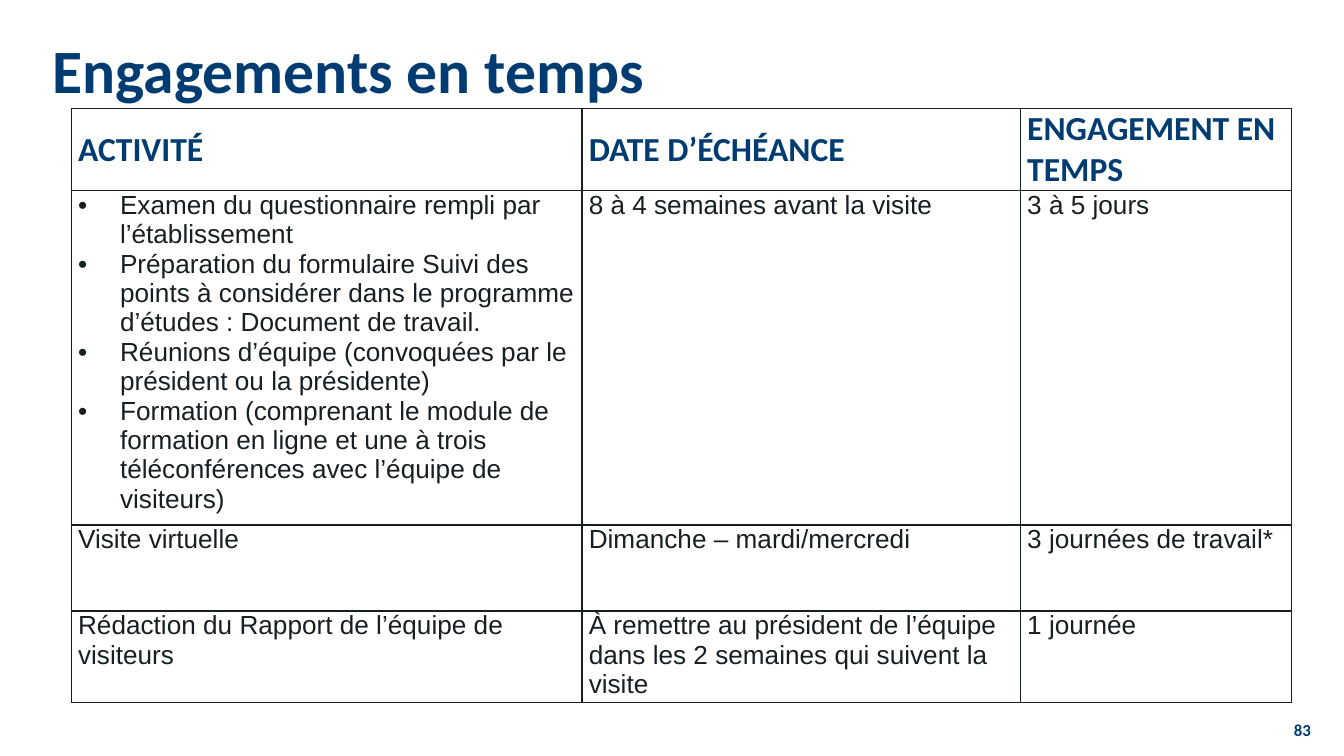
from dataclasses import dataclass

from lxml import etree
from pptx import Presentation
from pptx.dml.color import RGBColor
from pptx.enum import text
from pptx.oxml import ns
from pptx.util import Pt


@dataclass(frozen=True)
class Theme:
    navy: str = "003C71"
    ink: str = "171F23"
    heading_font: str = "Calibri"
    body_font: str = "Arial"
    title_size: int = 33
    header_size: int = 18
    body_size: int = 14
    number_size: int = 9


THEME = Theme()
BULLET_INDENT = Pt(22.5)
COLUMN_WIDTHS = (273.6, 234.9, 145.3)
ROW_HEIGHTS = (41.8, 179.2, 46.1, 49)

HEADERS = ("ACTIVITÉ", "DATE D’ÉCHÉANCE", "ENGAGEMENT EN TEMPS")
PREPARATION = (
    "Examen du questionnaire rempli par l’établissement",
    "Préparation du formulaire Suivi des points à considérer dans le programme "
    "d’études : Document de travail.",
    "Réunions d’équipe (convoquées par le président ou la présidente)",
    "Formation (comprenant le module de formation en ligne et une à trois "
    "téléconférences avec l’équipe de visiteurs)",
)
ROWS = (
    (PREPARATION, "8 à 4 semaines avant la visite", "3 à 5 jours"),
    ("Visite virtuelle", "Dimanche – mardi/mercredi", "3 journées de travail*"),
    (
        "Rédaction du Rapport de l’équipe de visiteurs",
        "À remettre au président de l’équipe dans les 2 semaines qui suivent la visite",
        "1 journée",
    ),
)


def write(paragraph, content, *, size, font=THEME.heading_font, color=THEME.navy,
          bold=True, align=text.PP_ALIGN.LEFT, bullet=False, line_spacing=None):
    """Put formatted text into a paragraph."""
    paragraph.alignment = align
    paragraph.line_spacing = line_spacing
    if bullet:
        add_bullet(paragraph)
    run = paragraph.add_run()
    run.text = content
    run.font.size = Pt(size)
    run.font.name = font
    run.font.bold = bold
    run.font.color.rgb = RGBColor.from_string(color)


def add_bullet(paragraph):
    properties = paragraph._p.get_or_add_pPr()
    properties.set("marL", str(BULLET_INDENT))
    properties.set("indent", str(-BULLET_INDENT))
    etree.SubElement(properties, ns.qn("a:buFont"), typeface=THEME.body_font)
    etree.SubElement(properties, ns.qn("a:buChar"), char="•")


def add_borders(cell):
    properties = cell._tc.get_or_add_tcPr()
    for side in ("lnL", "lnR", "lnT", "lnB"):
        line = etree.SubElement(properties, ns.qn(f"a:{side}"), w=str(Pt(1)))
        fill = etree.SubElement(line, ns.qn("a:solidFill"))
        etree.SubElement(fill, ns.qn("a:srgbClr"), val=THEME.ink)


def fill_cell(cell, content, *, anchor, **text_format):
    """Write one paragraph, or a bulleted list when given a tuple."""
    cell.margin_left = cell.margin_right = Pt(3.6)
    cell.margin_top = cell.margin_bottom = 0
    cell.vertical_anchor = anchor
    add_borders(cell)
    cell.fill.background()

    bulleted = isinstance(content, tuple)
    frame = cell.text_frame
    for index, item in enumerate(content if bulleted else (content,)):
        paragraph = frame.add_paragraph() if index else frame.paragraphs[0]
        write(paragraph, item, bullet=bulleted, **text_format)


def add_title(slide, content):
    title = slide.shapes.title
    title.left, title.top, title.width, title.height = Pt(21), 0, Pt(620.6), Pt(78.5)
    frame = title.text_frame
    frame.auto_size = text.MSO_AUTO_SIZE.NONE
    frame.vertical_anchor = text.MSO_ANCHOR.MIDDLE
    write(frame.paragraphs[0], content, size=THEME.title_size, line_spacing=0.9)


def add_schedule(slide):
    table = slide.shapes.add_table(
        len(ROW_HEIGHTS), len(COLUMN_WIDTHS), Pt(38.2), Pt(58.2),
        Pt(sum(COLUMN_WIDTHS)), Pt(sum(ROW_HEIGHTS))).table
    table.first_row = table.horz_banding = False
    for column, width in zip(table.columns, COLUMN_WIDTHS):
        column.width = Pt(width)
    for row, height in zip(table.rows, ROW_HEIGHTS):
        row.height = Pt(height)

    # Header row
    for column, label in enumerate(HEADERS):
        fill_cell(table.cell(0, column), label, anchor=text.MSO_ANCHOR.MIDDLE,
                  size=THEME.header_size)

    # Activity rows
    for row, entries in enumerate(ROWS, start=1):
        for column, entry in enumerate(entries):
            fill_cell(table.cell(row, column), entry, anchor=text.MSO_ANCHOR.TOP,
                      size=THEME.body_size, font=THEME.body_font,
                      color=THEME.ink, bold=False)


def add_slide_number(slide, number):
    frame = slide.shapes.add_textbox(Pt(683.3), Pt(385.2), Pt(26), Pt(11.5)).text_frame
    frame.word_wrap = True
    frame.vertical_anchor = text.MSO_ANCHOR.MIDDLE
    write(frame.paragraphs[0], number, size=THEME.number_size,
          align=text.PP_ALIGN.RIGHT)


def main():
    presentation = Presentation()
    presentation.slide_width, presentation.slide_height = Pt(720), Pt(405)
    slide = presentation.slides.add_slide(presentation.slide_layouts[5])

    add_title(slide, "Engagements en temps")
    add_schedule(slide)
    add_slide_number(slide, "83")

    presentation.save("out.pptx")


if __name__ == "__main__":
    main()
